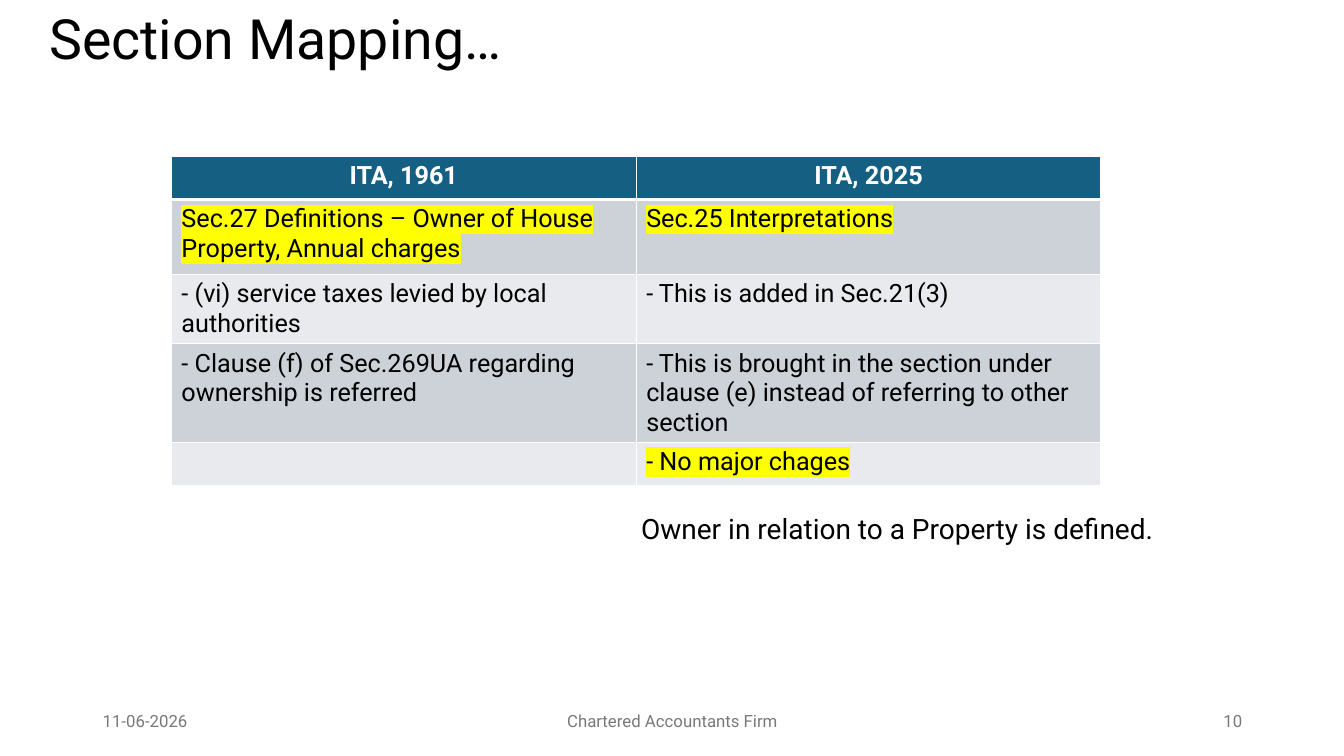
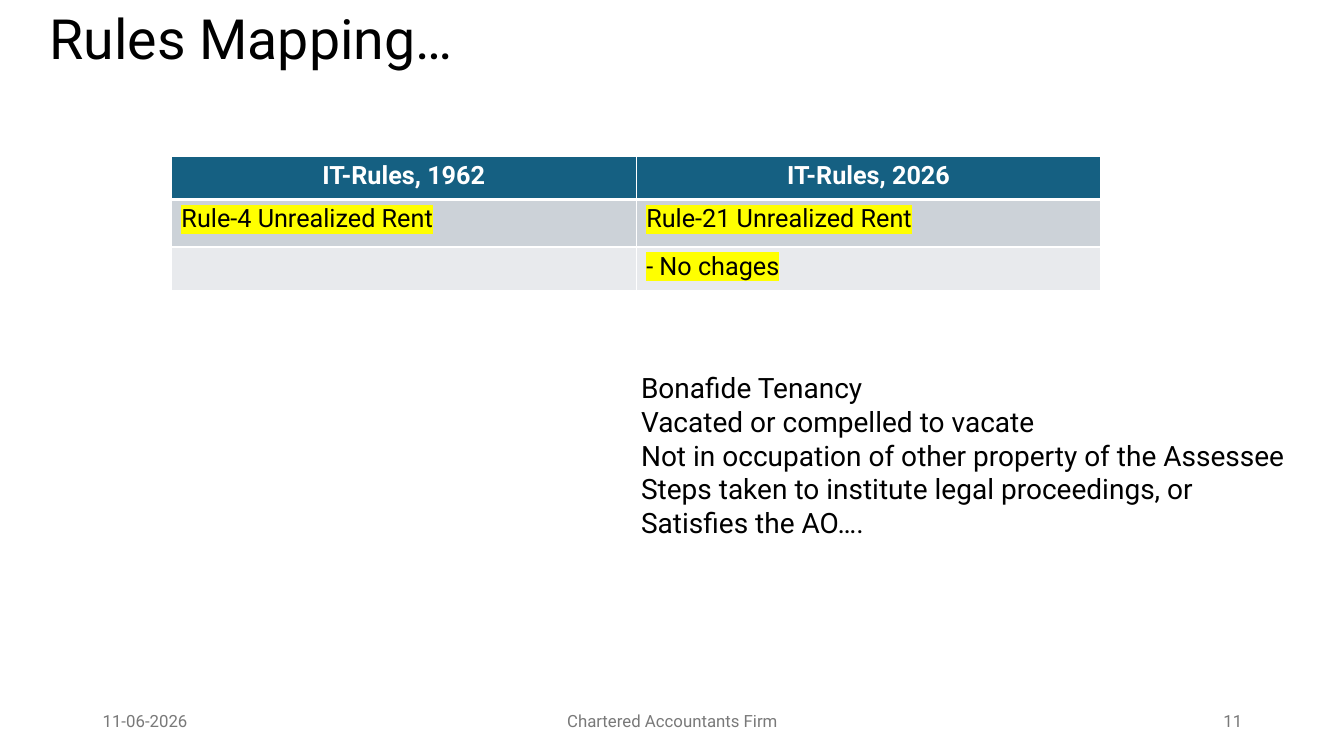
from lxml import etree
from pptx import Presentation
from pptx.dml.color import RGBColor
from pptx.enum import text
from pptx.oxml import ns
from pptx.util import Inches, Pt

FONT = "Roboto"
BLACK = RGBColor(0x00, 0x00, 0x00)
WHITE = RGBColor(0xFF, 0xFF, 0xFF)
GREY = RGBColor(0x79, 0x79, 0x79)
HEADER_BLUE = RGBColor(0x15, 0x60, 0x82)
BANDS = (RGBColor(0xCC, 0xD2, 0xD8), RGBColor(0xE8, 0xEA, 0xED))
YELLOW = RGBColor(0xFF, 0xFF, 0x00)

LEFT, CENTER, RIGHT = text.PP_ALIGN.LEFT, text.PP_ALIGN.CENTER, text.PP_ALIGN.RIGHT
DATE = "11-06-2026"
FIRM = "Chartered Accountants Firm"
HEADER_HEIGHT = 0.43
COLUMN_WIDTH = 4.61


def style_text(frame, size, color, align=LEFT, bold=False):
    for paragraph in frame.paragraphs:
        paragraph.alignment = align
        for run in paragraph.runs:
            run.font.size = Pt(size)
            run.font.name = FONT
            run.font.bold = bold
            run.font.color.rgb = color


def add_color(parent, color):
    etree.SubElement(parent, ns.qn("a:srgbClr"), val=str(color))


def highlight(frame):
    for paragraph in frame.paragraphs:
        for run in paragraph.runs:
            marker = etree.Element(ns.qn("a:highlight"))
            add_color(marker, YELLOW)
            run.font._element.find(ns.qn("a:solidFill")).addnext(marker)


def set_borders(cell, top=1, bottom=1):
    """Draw white cell borders; widths are in points."""
    properties = cell._tc.get_or_add_tcPr()
    for side, width in (("L", 1), ("R", 1), ("T", top), ("B", bottom)):
        line = etree.SubElement(properties, ns.qn(f"a:ln{side}"), w=str(Pt(width)))
        add_color(etree.SubElement(line, ns.qn("a:solidFill")), WHITE)


def fill_cell(cell, color):
    cell.fill.solid()
    cell.fill.fore_color.rgb = color


def add_title(slide, wording):
    title = slide.shapes.title
    title.left, title.top = Inches(0.39), Inches(0.09)
    title.width, title.height = Inches(10.07), Inches(0.64)
    frame = title.text_frame
    frame.text = wording
    frame.word_wrap = True
    frame.auto_size = text.MSO_AUTO_SIZE.NONE
    frame.vertical_anchor = text.MSO_ANCHOR.MIDDLE
    frame.paragraphs[0].line_spacing = 0.9
    style_text(frame, 39.6, BLACK)


def add_text(slide, wording, left, top, width, height, size, color, align=LEFT):
    box = slide.shapes.add_textbox(Inches(left), Inches(top), Inches(width), Inches(height))
    frame = box.text_frame
    frame.text = wording
    frame.word_wrap = True
    style_text(frame, size, color, align)
    return frame


def add_footer(slide, number):
    for wording, left, width, align in (
        (DATE, 0.92, 3, LEFT),
        (FIRM, 4.42, 4.5, CENTER),
        (str(number), 9.42, 3, RIGHT),
    ):
        frame = add_text(slide, wording, left, 6.95, width, 0.4, 12, GREY, align)
        frame.vertical_anchor = text.MSO_ANCHOR.MIDDLE


def add_mapping(slide, headings, rows):
    """Add the old/new table; each row is (old, new, height, highlighted)."""
    height = HEADER_HEIGHT + sum(row[2] for row in rows)
    table = slide.shapes.add_table(
        len(rows) + 1, 2, Inches(1.7), Inches(1.55),
        Inches(2 * COLUMN_WIDTH), Inches(height)).table
    for column in table.columns:
        column.width = Inches(COLUMN_WIDTH)

    table.rows[0].height = Inches(HEADER_HEIGHT)
    for cell, heading in zip(table.rows[0].cells, headings):
        cell.text_frame.text = heading
        style_text(cell.text_frame, 18, WHITE, CENTER, bold=True)
        set_borders(cell, bottom=3)
        fill_cell(cell, HEADER_BLUE)

    for index, (old, new, row_height, highlighted) in enumerate(rows):
        row = table.rows[index + 1]
        row.height = Inches(row_height)
        for cell, wording in zip(row.cells, (old, new)):
            cell.text_frame.text = wording
            style_text(cell.text_frame, 18, BLACK)
            if highlighted:
                highlight(cell.text_frame)
            set_borders(cell, top=3 if index == 0 else 1)
            fill_cell(cell, BANDS[index % 2])


def add_remarks(slide, lines, top, height):
    frame = add_text(slide, "\n".join(lines), 6.26, top, 6.74, height, 20, BLACK)
    frame.auto_size = text.MSO_AUTO_SIZE.SHAPE_TO_FIT_TEXT


def add_mapping_slide(prs, number, title, headings, rows, remarks, remarks_top, remarks_height):
    slide = prs.slides.add_slide(prs.slide_layouts[5])
    add_title(slide, title)
    add_mapping(slide, headings, rows)
    add_footer(slide, number)
    add_remarks(slide, remarks, remarks_top, remarks_height)


def main():
    prs = Presentation()
    prs.slide_width, prs.slide_height = Inches(13.33), Inches(7.5)

    add_mapping_slide(
        prs, 10, "Section Mapping…", ("ITA, 1961", "ITA, 2025"),
        [
            ("Sec.27 Definitions – Owner of House Property, Annual charges",
             "Sec.25 Interpretations", 0.74, True),
            ("- (vi) service taxes levied by local authorities",
             "- This is added in Sec.21(3)", 0.69, False),
            ("- Clause (f) of Sec.269UA regarding ownership is referred",
             "- This is brought in the section under clause (e) "
             "instead of referring to other section", 0.98, False),
            ("", "- No major chages", 0.43, True),
        ],
        ["Owner in relation to a Property is defined."], 5.03, 0.74)

    add_mapping_slide(
        prs, 11, "Rules Mapping…", ("IT-Rules, 1962", "IT-Rules, 2026"),
        [
            ("Rule-4 Unrealized Rent", "Rule-21 Unrealized Rent", 0.47, True),
            ("", "- No chages", 0.43, True),
        ],
        [
            "Bonafide Tenancy",
            "Vacated or compelled to vacate",
            "Not in occupation of other property of the Assessee",
            "Steps taken to institute legal proceedings, or",
            "Satisfies the AO….",
        ], 3.63, 2.09)

    prs.save("out.pptx")


if __name__ == "__main__":
    main()
